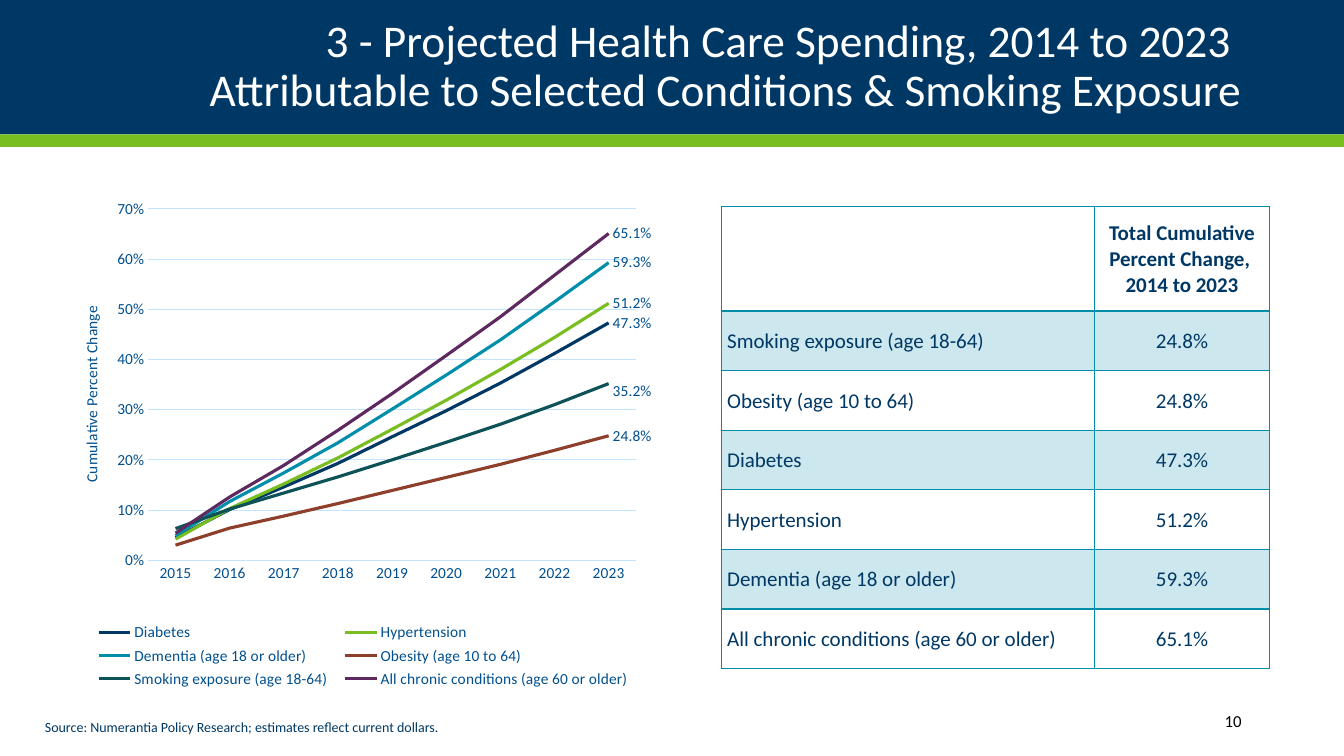
"""Build a slide comparing projected health care spending growth by condition."""
from dataclasses import dataclass

from lxml.etree import SubElement
from pptx import Presentation
from pptx.chart.data import CategoryChartData
from pptx.dml.color import RGBColor
from pptx.enum.chart import XL_CHART_TYPE, XL_LABEL_POSITION, XL_LEGEND_POSITION, XL_TICK_MARK
from pptx.enum.shapes import MSO_SHAPE
from pptx.enum.text import MSO_ANCHOR, MSO_AUTO_SIZE, PP_ALIGN
from pptx.oxml import parse_xml
from pptx.oxml.ns import nsdecls, qn
from pptx.util import Pt


@dataclass(frozen=True)
class Theme:
    font: str = "Calibri"
    navy: str = "003865"
    green: str = "78BE21"
    teal: str = "008EAA"
    chart_text: str = "004F8E"
    grid: str = "C2E4FF"
    white: str = "FFFFFF"
    black: str = "000000"
    title_size: float = 32.4
    table_size: float = 15
    number_size: float = 12
    chart_size: float = 11
    source_size: float = 10


@dataclass(frozen=True)
class Box:
    left: float
    top: float
    width: float
    height: float

    def lengths(self) -> tuple:
        return Pt(self.left), Pt(self.top), Pt(self.width), Pt(self.height)


@dataclass(frozen=True)
class Condition:
    name: str
    color: str
    growth: tuple


THEME = Theme()
YEARS = [str(year) for year in range(2015, 2024)]
DIABETES = Condition("Diabetes", THEME.navy,
                     (.045, .101, .146, .193, .246, .298, .353, .412, .473))
HYPERTENSION = Condition("Hypertension", THEME.green,
                         (.042, .103, .152, .204, .261, .319, .380, .444, .512))
DEMENTIA = Condition("Dementia (age 18 or older)", THEME.teal,
                     (.049, .117, .174, .234, .301, .369, .439, .515, .593))
OBESITY = Condition("Obesity (age 10 to 64)", "8D3F2B",
                    (.030, .064, .088, .113, .139, .165, .191, .219, .248))
SMOKING = Condition("Smoking exposure (age 18-64)", "0D5257",
                    (.063, .102, .134, .166, .200, .235, .271, .310, .352))
CHRONIC = Condition("All chronic conditions (age 60 or older)", "5D295F",
                    (.054, .126, .189, .259, .332, .408, .485, .568, .651))
CHART_ORDER = (DIABETES, HYPERTENSION, DEMENTIA, OBESITY, SMOKING, CHRONIC)
TABLE_ORDER = (
    (SMOKING.name, "24.8%"), (OBESITY.name, "24.8%"), (DIABETES.name, "47.3%"),
    (HYPERTENSION.name, "51.2%"), (DEMENTIA.name, "59.3%"), (CHRONIC.name, "65.1%"),
)


def rgb(color: str) -> RGBColor:
    return RGBColor.from_string(color)


def style_font(font, size: float, color: str, bold: bool = False) -> None:
    font.name, font.size, font.bold = THEME.font, Pt(size), bold
    font.color.rgb = rgb(color)


def add_title(slide, lines: tuple, box: Box):
    title = slide.shapes.title
    title.left, title.top, title.width, title.height = box.lengths()
    frame = title.text_frame
    frame.auto_size, frame.word_wrap = MSO_AUTO_SIZE.NONE, True
    frame.vertical_anchor = MSO_ANCHOR.MIDDLE
    paragraph = frame.paragraphs[0]
    paragraph.alignment, paragraph.line_spacing = PP_ALIGN.RIGHT, 0.9
    style_font(paragraph.font, THEME.title_size, THEME.white)
    for index, line in enumerate(lines):
        if index:
            paragraph.add_line_break()
        paragraph.add_run().text = line
    return title


def add_band(slide, title, box: Box, color: str) -> None:
    band = slide.shapes.add_shape(MSO_SHAPE.RECTANGLE, *box.lengths())
    band.shadow.inherit = False
    band.fill.solid()
    band.fill.fore_color.rgb = rgb(color)
    band.line.fill.background()
    title.element.addprevious(band.element)


def add_text(slide, text: str, box: Box, size: float, color: str,
             alignment: PP_ALIGN, anchor: MSO_ANCHOR) -> None:
    frame = slide.shapes.add_textbox(*box.lengths()).text_frame
    frame.word_wrap, frame.vertical_anchor = True, anchor
    paragraph = frame.paragraphs[0]
    paragraph.text, paragraph.alignment = text, alignment
    style_font(paragraph.font, size, color)


def set_layout(parent, position: int, **settings) -> None:
    for layout in parent.findall(qn("c:layout")):
        parent.remove(layout)
    layout = parse_xml(f"<c:layout {nsdecls('c')}><c:manualLayout/></c:layout>")
    for name, value in settings.items():
        SubElement(layout[0], qn(f"c:{name}")).set("val", str(value))
    parent.insert(position, layout)


def add_growth_chart(slide, box: Box) -> None:
    data = CategoryChartData(number_format="0.0%")
    data.categories = YEARS
    for condition in CHART_ORDER:
        data.add_series(condition.name, condition.growth)
    chart = slide.shapes.add_chart(XL_CHART_TYPE.LINE, *box.lengths(), data).chart
    chart.has_title = False
    style_font(chart.font, THEME.chart_size, THEME.chart_text)
    chart.plots[0].vary_by_categories = False
    for condition, series in zip(CHART_ORDER, chart.plots[0].series):
        series.smooth = False
        series.format.line.width = Pt(2.25)
        series.format.line.color.rgb = rgb(condition.color)
        series.points[len(YEARS) - 1].data_label.position = XL_LABEL_POSITION.RIGHT

    years, growth = chart.category_axis, chart.value_axis
    for axis in (years, growth):
        axis.major_tick_mark = axis.minor_tick_mark = XL_TICK_MARK.NONE
        style_font(axis.tick_labels.font, THEME.chart_size, THEME.chart_text)
    growth.minimum_scale, growth.maximum_scale, growth.major_unit = 0, 0.7, 0.1
    growth.tick_labels.number_format = "0%"
    growth.tick_labels.number_format_is_linked = False
    growth.format.line.fill.background()
    for line in (years.format.line, growth.major_gridlines.format.line):
        line.width = Pt(0.75)
        line.color.rgb = rgb(THEME.grid)
    paragraph = growth.axis_title.text_frame.paragraphs[0]
    paragraph.text = "Cumulative Percent Change"
    style_font(paragraph.font, THEME.chart_size, THEME.chart_text)

    chart.has_legend = True
    chart.legend.position = XL_LEGEND_POSITION.BOTTOM
    chart.legend.include_in_layout = False
    style_font(chart.legend.font, THEME.chart_size, THEME.chart_text)

    root = chart.element
    edges = {"xMode": "edge", "yMode": "edge"}
    set_layout(root.xpath(".//c:plotArea")[0], 0, layoutTarget="inner", **edges,
               x=0.143, y=0.064, w=0.81, h=0.669)
    set_layout(root.xpath(".//c:valAx/c:title")[0], 1, **edges, x=0.026, y=0.243)
    set_layout(root.xpath(".//c:legend")[0], 1, **edges, x=0.04, y=0.845, w=0.92, h=0.14)
    smoking_label = root.xpath(".//c:dLbl")[CHART_ORDER.index(SMOKING)]
    set_layout(smoking_label, 1, x=0, y=0.015)


def add_borders(cell, top: float, bottom: float) -> None:
    properties = cell._tc.get_or_add_tcPr()
    for side, width in (("L", 1), ("R", 1), ("T", top), ("B", bottom)):
        properties.append(parse_xml(
            f'<a:ln{side} {nsdecls("a")} w="{Pt(width)}"><a:solidFill>'
            f'<a:srgbClr val="{THEME.teal}"/></a:solidFill></a:ln{side}>'))


def fill_cell(cell, lines: tuple, row: int, column: int) -> None:
    cell.vertical_anchor = MSO_ANCHOR.MIDDLE
    cell.margin_left = Pt(0.72 if column else 4.1)
    cell.margin_right = cell.margin_top = Pt(0.72)
    cell.margin_bottom = Pt(0)
    for index, line in enumerate(lines):
        frame = cell.text_frame
        paragraph = frame.add_paragraph() if index else frame.paragraphs[0]
        paragraph.text = line
        paragraph.alignment = PP_ALIGN.CENTER if column else PP_ALIGN.LEFT
        style_font(paragraph.font, THEME.table_size, THEME.navy, bold=row == 0)
    add_borders(cell, top=2 if row == 1 else 1, bottom=2 if row == 0 else 1)
    if row % 2:
        cell.fill.solid()
        cell.fill.fore_color.rgb = rgb(THEME.teal)
        color = cell._tc.tcPr.find(qn("a:solidFill"))[0]
        SubElement(color, qn("a:alpha")).set("val", "20000")
    else:
        cell.fill.background()


def add_change_table(slide, box: Box, header_height: float, name_width: float) -> None:
    header = ((), ("Total Cumulative Percent Change, ", "2014 to 2023"))
    rows = [header] + [((name,), (change,)) for name, change in TABLE_ORDER]
    table = slide.shapes.add_table(len(rows), 2, *box.lengths()).table
    table.first_row = table.horz_banding = False
    table.columns[0].width = Pt(name_width)
    table.columns[1].width = Pt(box.width - name_width)
    body_height = (box.height - header_height) / len(TABLE_ORDER)
    for row, cells in enumerate(rows):
        table.rows[row].height = Pt(body_height if row else header_height)
        for column, lines in enumerate(cells):
            fill_cell(table.cell(row, column), lines, row, column)


def main() -> None:
    presentation = Presentation()
    presentation.slide_width, presentation.slide_height = Pt(960), Pt(540)
    slide = presentation.slides.add_slide(presentation.slide_layouts[5])
    title = add_title(slide, ("3 - Projected Health Care Spending, 2014 to 2023 ",
                              "Attributable to Selected Conditions & Smoking Exposure"),
                      Box(66, 12, 828, 72))
    add_band(slide, title, Box(0, 0, 960, 96), THEME.navy)
    add_band(slide, title, Box(0, 96, 960, 9), THEME.green)
    add_growth_chart(slide, Box(44.6, 125.3, 429.8, 375.1))
    add_change_table(slide, Box(515.3, 147.6, 391.7, 330.1), 74.5, 266.4)
    add_text(slide, "10", Box(779, 500.5, 115, 28.8), THEME.number_size, THEME.black,
             PP_ALIGN.RIGHT, MSO_ANCHOR.MIDDLE)
    add_text(slide, "Source: Numerantia Policy Research; estimates reflect current dollars.",
             Box(25, 509.8, 802, 19.4), THEME.source_size, THEME.navy,
             PP_ALIGN.LEFT, MSO_ANCHOR.TOP)
    presentation.save("out.pptx")


if __name__ == "__main__":
    main()
